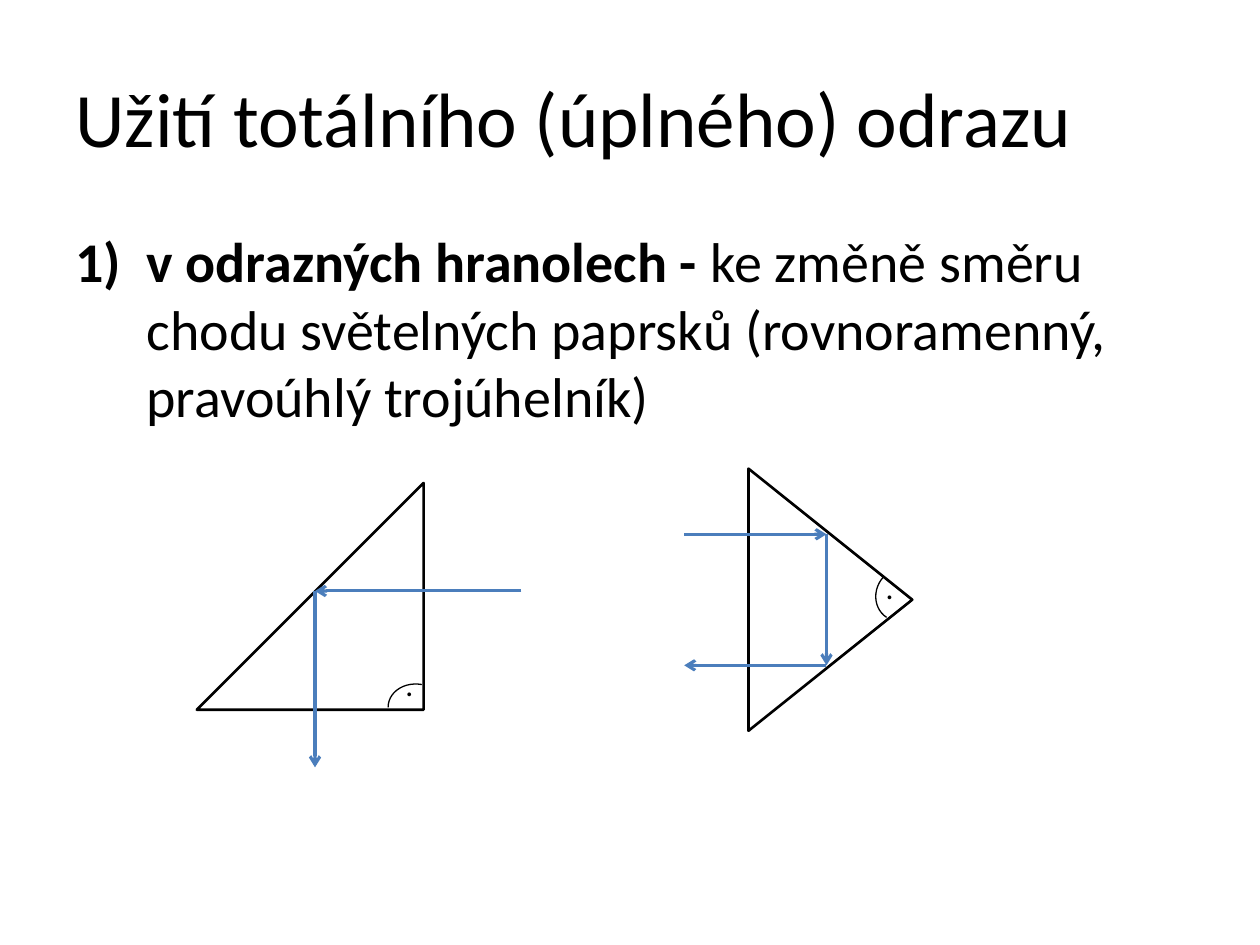
"""Slide on total reflection: two reflecting prisms with their light rays."""
from lxml import etree
from pptx import Presentation
from pptx.dml.color import RGBColor
from pptx.enum.shapes import MSO_CONNECTOR, MSO_SHAPE
from pptx.enum.text import MSO_ANCHOR, MSO_AUTO_SIZE, PP_ALIGN
from pptx.oxml.ns import qn
from pptx.util import Pt

BLACK = RGBColor(0x00, 0x00, 0x00)
RAY_BLUE = RGBColor(0x4B, 0x7E, 0xBC)


def add_text(paragraph, text, size=18, bold=False, align=PP_ALIGN.LEFT):
    paragraph.alignment = align
    run = paragraph.add_run()
    run.text = text
    run.font.name = "Calibri"
    run.font.size = Pt(size)
    run.font.bold = bold
    run.font.color.rgb = BLACK


prs = Presentation()
prs.slide_width, prs.slide_height = Pt(720), Pt(540)
slide = prs.slides.add_slide(prs.slide_layouts[1])
shapes = slide.shapes

title = shapes.title
title.left, title.top, title.width, title.height = Pt(36), Pt(21.6), Pt(648), Pt(90)
title.text_frame.vertical_anchor = MSO_ANCHOR.MIDDLE
add_text(title.text_frame.paragraphs[0], "Užití totálního (úplného) odrazu", size=44)

uses = slide.placeholders[1]
uses.left, uses.top, uses.width, uses.height = Pt(36), Pt(126), Pt(648), Pt(356.4)
use = uses.text_frame.paragraphs[0]
use_format = use._p.get_or_add_pPr()
use_format.set("marL", str(Pt(40.5)))
use_format.set("indent", str(-Pt(40.5)))
etree.SubElement(use_format, qn("a:buFont"), typeface="+mj-lt")
etree.SubElement(use_format, qn("a:buAutoNum"), type="arabicParenR")
use.space_before = Pt(0)
add_text(use, "v odrazných hranolech - ", size=32, bold=True)
add_text(use, "ke změně směru chodu světelných paprsků "
              "(rovnoramenný, pravoúhlý trojúhelník)", size=32)

prisms = [
    {
        "outline": (112.5, 276, 129.6, 129.6), "turn": 0, "apex": 1,
        "rays": [(298, 337.7, 180, 337.7), (180, 337.7, 180, 438.5)],
        "angle": (224.6, 388.1, 28.1, 33.8), "angle_turn": 279.8, "angle_end": 0,
        "dot": (224.6, 376.6),
    },
    {
        "outline": (399.6, 295.9, 149.8, 93.6), "turn": 90, "apex": 0.5,
        "rays": [(391, 305.3, 472.3, 305.3), (472.3, 380.2, 391, 380.2),
                 (472.3, 305.3, 472.3, 380.2)],
        "angle": (501.1, 323.3, 29.5, 32.4), "angle_turn": 221.7, "angle_end": 215.25,
        "dot": (499, 321.1),
    },
]

for prism in prisms:
    triangle = shapes.add_shape(MSO_SHAPE.ISOSCELES_TRIANGLE, *map(Pt, prism["outline"]))
    triangle.adjustments[0] = prism["apex"]
    triangle.rotation = prism["turn"]

    for ends in prism["rays"]:
        ray = shapes.add_connector(MSO_CONNECTOR.STRAIGHT, *map(Pt, ends))
        ray.line.color.rgb = RAY_BLUE
        ray.line.width = Pt(1.75)
        etree.SubElement(ray.line._get_or_add_ln(), qn("a:tailEnd"), type="arrow")
        etree.SubElement(ray._element.spPr, qn("a:effectLst"))

    angle = shapes.add_shape(MSO_SHAPE.ARC, *map(Pt, prism["angle"]))
    angle.adjustments[0] = 157.82
    angle.adjustments[1] = prism["angle_end"]
    angle.rotation = prism["angle_turn"]

    for outline, width in ((triangle, 1.5), (angle, 0.75)):
        outline.shadow.inherit = False
        outline.fill.background()
        outline.line.color.rgb = BLACK
        outline.line.width = Pt(width)

    dot = shapes.add_textbox(*map(Pt, prism["dot"]), Pt(16.6), Pt(28.8))
    dot.text_frame.word_wrap = True
    dot.text_frame.auto_size = MSO_AUTO_SIZE.SHAPE_TO_FIT_TEXT
    add_text(dot.text_frame.paragraphs[0], ".", align=PP_ALIGN.CENTER)

prs.save("out.pptx")
